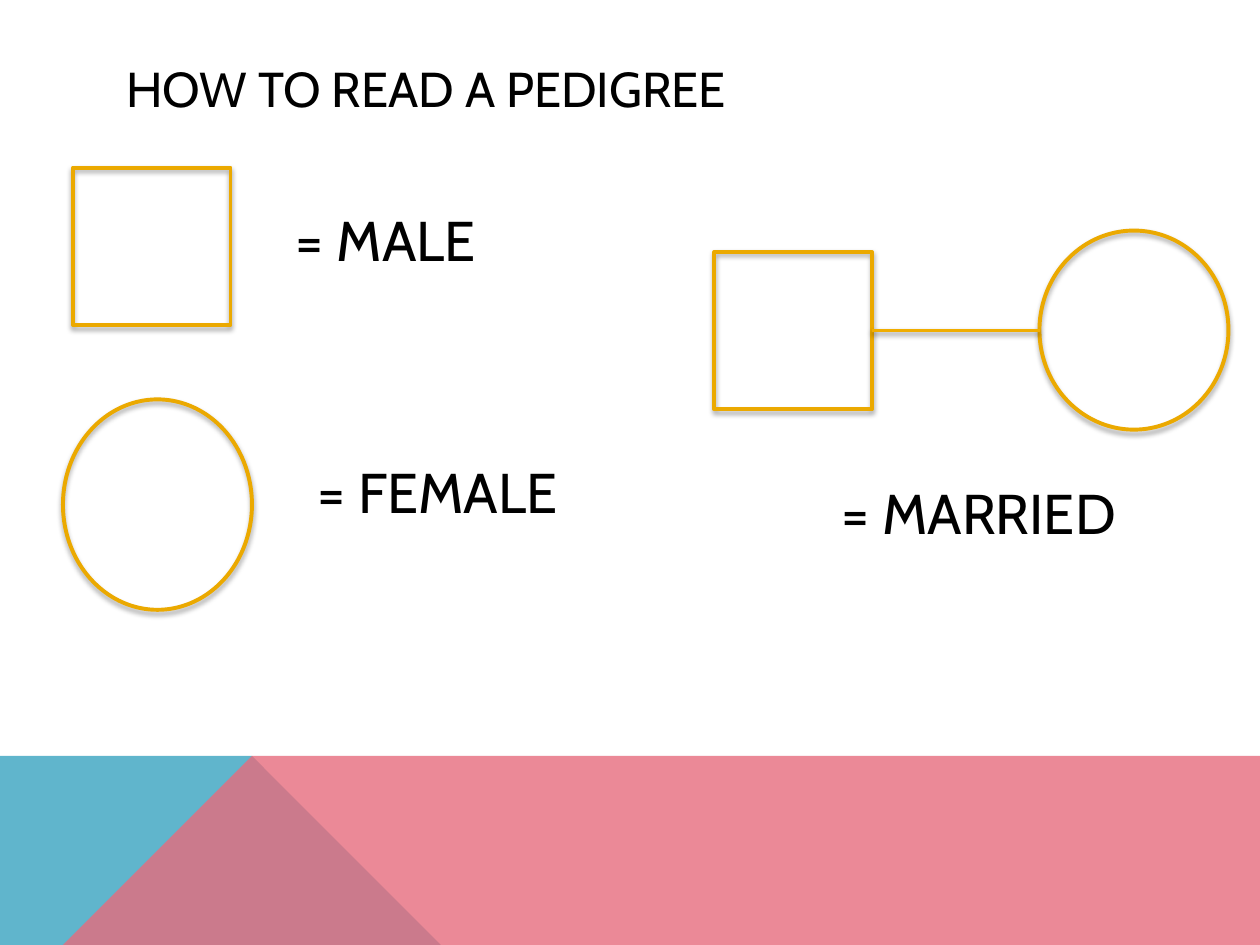
from lxml import etree
from pptx import Presentation
from pptx.dml.color import RGBColor
from pptx.enum.shapes import MSO_CONNECTOR, MSO_SHAPE
from pptx.enum.text import MSO_ANCHOR, MSO_AUTO_SIZE, PP_ALIGN
from pptx.oxml.ns import qn
from pptx.util import Inches, Pt

BLACK = RGBColor(0x00, 0x00, 0x00)
BLUE = RGBColor(0x60, 0xB5, 0xCC)
PINK = RGBColor(0xE6, 0x6C, 0x7D)
GOLD = RGBColor(0xEB, 0xA9, 0x00)
LINK_GOLD = RGBColor(0xF0, 0xAD, 0x00)
FONT = "Cabin"
WIDTH, HEIGHT = 10, 7.5


def write_text(frame, text, size, wrap=True, anchor=MSO_ANCHOR.TOP):
    frame.word_wrap = wrap
    frame.vertical_anchor = anchor
    paragraph = frame.paragraphs[0]
    paragraph.alignment = PP_ALIGN.LEFT
    run = paragraph.add_run()
    run.text = text
    run.font.name, run.font.size = FONT, Pt(size)
    run.font.color.rgb = BLACK


def add_soft_shadow(item, opacity, distance):
    """Cast a blurred black shadow straight down; opacity in percent, distance in points."""
    properties = item._element.spPr
    effects = properties.find(qn("a:effectLst"))
    if effects is None:
        effects = etree.SubElement(properties, qn("a:effectLst"))
    shadow = etree.SubElement(effects, qn("a:outerShdw"), blurRad=str(Pt(3.1)),
                              dist=str(Pt(distance)), dir="5400000", rotWithShape="0")
    color = etree.SubElement(shadow, qn("a:srgbClr"), val=str(BLACK))
    etree.SubElement(color, qn("a:alpha"), val=str(opacity * 1000))


def add_person(slide, kind, left, top, width, height):
    person = slide.shapes.add_shape(kind, Inches(left), Inches(top), Inches(width), Inches(height))
    person.fill.background()
    person.line.color.rgb = GOLD
    person.line.width = Pt(2.25)
    person.shadow.inherit = False
    add_soft_shadow(person, 35, 1.8)
    return person


def add_label(slide, text, left, top, width):
    label = slide.shapes.add_textbox(Inches(left), Inches(top), Inches(width), Inches(0.64))
    write_text(label.text_frame, text, 32, wrap=False)
    label.text_frame.auto_size = MSO_AUTO_SIZE.SHAPE_TO_FIT_TEXT


def add_band_part(slide, points, color, opacity=100):
    (x, y), *rest = points
    builder = slide.shapes.build_freeform(x, y, scale=Inches(1))
    builder.add_line_segments(rest, close=True)
    part = builder.convert_to_shape()
    part.fill.solid()
    part.fill.fore_color.rgb = color
    part.line.fill.background()
    part.shadow.inherit = False
    if opacity < 100:
        fill_color = part._element.spPr.find(qn("a:solidFill"))[0]
        etree.SubElement(fill_color, qn("a:alpha"), val=str(opacity * 1000))


def add_band(slide, top, peak, foot):
    """Bottom band: a blue wedge under a translucent pink field, meeting at the peak."""
    add_band_part(slide, [(0, HEIGHT), (0, top), (peak, top), (foot, HEIGHT)], BLUE)
    add_band_part(slide, [(0, HEIGHT), (peak, top), (WIDTH, top), (WIDTH, HEIGHT)], PINK, 80)


def add_title(slide, text, left, top, width, height):
    title = slide.shapes.title
    title.left, title.top = Inches(left), Inches(top)
    title.width, title.height = Inches(width), Inches(height)
    write_text(title.text_frame, text, 28, anchor=MSO_ANCHOR.MIDDLE)


def add_symbol_key(slide, left, top):
    add_person(slide, MSO_SHAPE.RECTANGLE, left + 0.08, top, 1.25, 1.25)
    add_label(slide, "= MALE", left + 1.75, top + 0.25, 1.65)
    add_person(slide, MSO_SHAPE.OVAL, left, top + 1.84, 1.5, 1.67)
    add_label(slide, "= FEMALE", left + 1.92, top + 2.25, 2.12)


def add_couple(slide, left, top):
    husband = add_person(slide, MSO_SHAPE.RECTANGLE, left, top + 0.17, 1.25, 1.25)
    wife = add_person(slide, MSO_SHAPE.OVAL, left + 2.58, top, 1.5, 1.58)
    middle = husband.top + husband.height // 2
    marriage = slide.shapes.add_connector(
        MSO_CONNECTOR.STRAIGHT, husband.left + husband.width, middle, wife.left, middle)
    marriage.begin_connect(husband, 3)
    marriage.line.color.rgb = LINK_GOLD
    marriage.line.width = Pt(2)
    add_soft_shadow(marriage, 38, 1.6)
    add_label(slide, "= MARRIED", left + 0.91, top + 1.92, 2.38)


def main():
    deck = Presentation()
    deck.slide_width, deck.slide_height = Inches(WIDTH), Inches(HEIGHT)
    slide = deck.slides.add_slide(deck.slide_layouts[5])
    add_band(slide, top=5.52, peak=2.23, foot=3.91)
    add_title(slide, "HOW TO READ A PEDIGREE", 0.9, 0.4, 8.22, 0.6)
    add_symbol_key(slide, 0.5, 1.33)
    add_couple(slide, 5.67, 1.83)
    deck.save("out.pptx")


if __name__ == "__main__":
    main()
